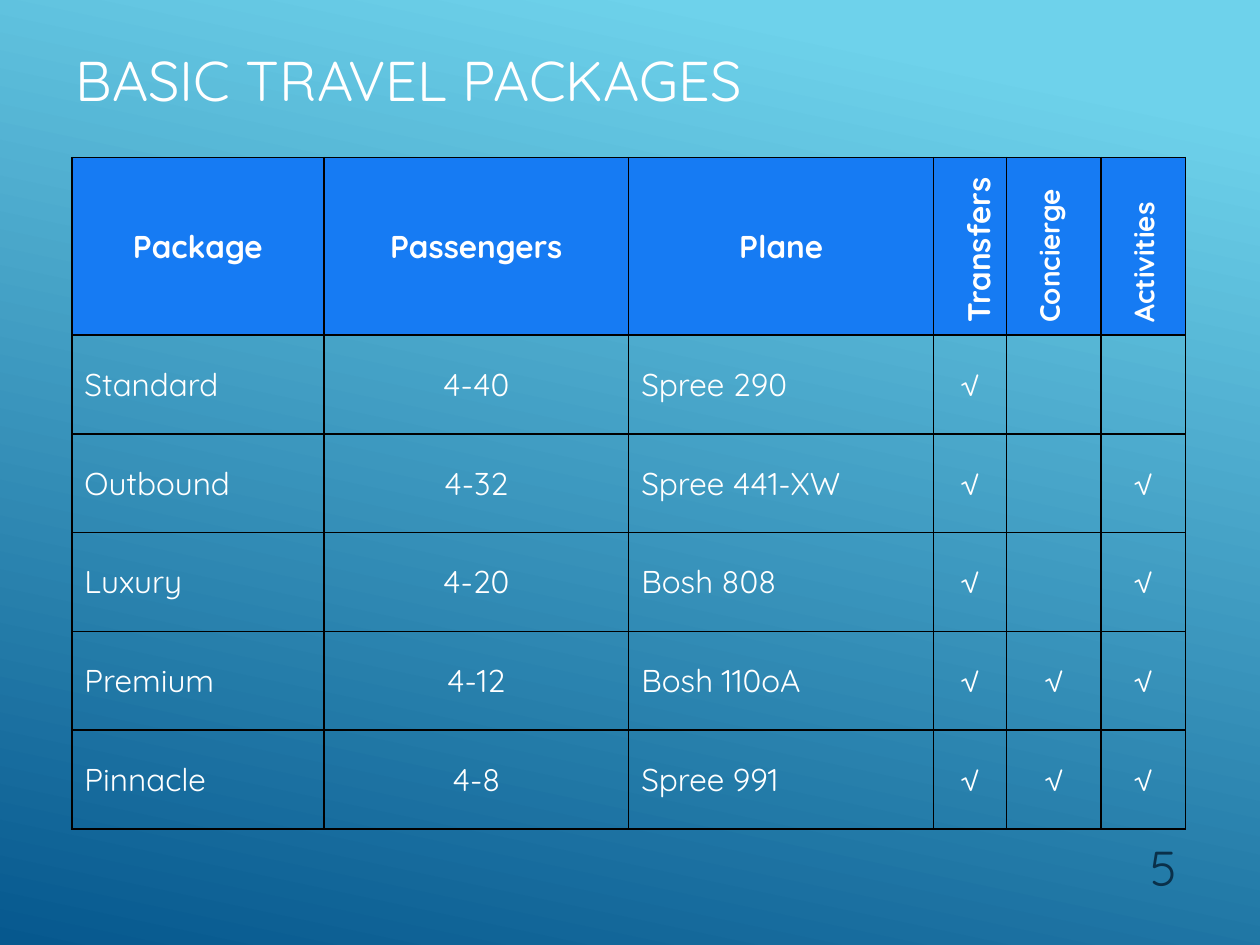
from dataclasses import dataclass

from lxml.etree import SubElement
from pptx import Presentation
from pptx.dml.color import RGBColor
from pptx.enum.text import MSO_ANCHOR, PP_ALIGN
from pptx.oxml import parse_xml
from pptx.oxml.ns import nsdecls, qn
from pptx.util import Inches, Pt


@dataclass(frozen=True)
class Theme:
    font: str = "Quicksand"
    text: str = "FFFFFF"
    header: str = "167BF3"
    border: str = "000000"
    number: str = "0A304A"
    sky: str = "6ED2EB"
    deep: str = "06588E"
    title_size: int = 32
    table_size: int = 18
    small_size: int = 16
    number_size: int = 28


THEME = Theme()
COL_WIDTHS = (2, 2.42, 2.42, 0.58, 0.75, 0.67)
HEADER_HEIGHT, ROW_HEIGHT = 1.41, 0.784
CENTERED_COLS = (1, 3, 4, 5)
FIRST_SERVICE_COL = 3

HEADERS = ("Package", "Passengers", "Plane", "Transfers", "Concierge", "Activities")
PACKAGES = (
    ("Standard", "4-40", "Spree 290", "√", "", ""),
    ("Outbound", "4-32", "Spree 441-XW", "√", "", "√"),
    ("Luxury", "4-20", "Bosh 808", "√", "", "√"),
    ("Premium", "4-12", "Bosh 110oA", "√", "√", "√"),
    ("Pinnacle", "4-8", "Spree 991", "√", "√", "√"),
)


def set_background(s):
    fill = s.background.fill
    fill.gradient()
    fill.gradient_angle = 360 - 102
    stops = ((0.1, THEME.sky), (1, THEME.deep))
    for stop, (position, color) in zip(fill.gradient_stops, stops):
        stop.position = position
        stop.color.rgb = RGBColor.from_string(color)


def add_run(p, text, size, color=THEME.text, bold=False):
    r = p.add_run()
    r.text = text
    r.font.name = THEME.font
    r.font.size = Pt(size)
    r.font.bold = bold
    r.font.color.rgb = RGBColor.from_string(color)


def place(sp, left, top, width, height):
    sp.left, sp.top = Inches(left), Inches(top)
    sp.width, sp.height = Inches(width), Inches(height)


def add_title(s, text):
    sp = s.shapes.title
    place(sp, 0.5, 0, 7.17, 1.25)
    tf = sp.text_frame
    tf.vertical_anchor = MSO_ANCHOR.MIDDLE
    p = tf.paragraphs[0]
    p.alignment = PP_ALIGN.LEFT
    add_run(p, text, THEME.title_size)


def add_page_number(s, text):
    sp = s.shapes.add_textbox(Inches(8.5), Inches(6.43), Inches(0.94), Inches(0.73))
    tf = sp.text_frame
    tf.word_wrap = True
    tf.vertical_anchor = MSO_ANCHOR.BOTTOM
    p = tf.paragraphs[0]
    p.alignment = PP_ALIGN.RIGHT
    add_run(p, text, THEME.number_size, THEME.number)


def set_borders(cell):
    """Draw the four cell borders; they must precede the fill in tcPr."""
    tcPr = cell._tc.get_or_add_tcPr()
    for i, side in enumerate(("lnL", "lnR", "lnT", "lnB")):
        ln = parse_xml(f'<a:{side} {nsdecls("a")} w="{Pt(1)}"/>')
        fill = SubElement(ln, qn("a:solidFill"))
        SubElement(fill, qn("a:srgbClr"), val=THEME.border)
        tcPr.insert(i, ln)


def turn_upward(cell):
    """Make the cell's text read from bottom to top."""
    cell._tc.get_or_add_tcPr().set("vert", "vert270")
    cell.margin_left = cell.margin_right = Inches(0.1)
    cell.margin_top, cell.margin_bottom = Inches(0.2), Inches(0.05)


def write_cell(cell, text, size, centered, bold=False):
    cell.vertical_anchor = MSO_ANCHOR.MIDDLE
    p = cell.text_frame.paragraphs[0]
    p.alignment = PP_ALIGN.CENTER if centered else PP_ALIGN.LEFT
    if text:
        add_run(p, text, size, bold=bold)


def format_header(cell, col, text):
    upward = col >= FIRST_SERVICE_COL
    size = THEME.small_size if col > FIRST_SERVICE_COL else THEME.table_size
    write_cell(cell, text, size, centered=not upward, bold=True)
    cell.fill.solid()
    cell.fill.fore_color.rgb = RGBColor.from_string(THEME.header)
    if upward:
        turn_upward(cell)


def format_body(cell, col, text):
    write_cell(cell, text, THEME.table_size, col in CENTERED_COLS)
    cell.fill.background()


def add_package_table(s):
    rows = (HEADERS, *PACKAGES)
    heights = (HEADER_HEIGHT, *[ROW_HEIGHT] * len(PACKAGES))
    table = s.shapes.add_table(
        len(rows), len(HEADERS), Inches(0.57), Inches(1.25),
        Inches(sum(COL_WIDTHS)), Inches(sum(heights))).table
    table.horz_banding = False
    for column, width in zip(table.columns, COL_WIDTHS):
        column.width = Inches(width)
    for row, height in zip(table.rows, heights):
        row.height = Inches(height)
    for i, texts in enumerate(rows):
        format_cell = format_body if i else format_header
        for col, text in enumerate(texts):
            cell = table.cell(i, col)
            format_cell(cell, col, text)
            set_borders(cell)


def main():
    prs = Presentation()
    prs.slide_width, prs.slide_height = Inches(10), Inches(7.5)
    s = prs.slides.add_slide(prs.slide_layouts[5])
    set_background(s)
    add_title(s, "BASIC TRAVEL PACKAGES")
    add_package_table(s)
    add_page_number(s, "5")
    prs.save("out.pptx")


if __name__ == "__main__":
    main()
